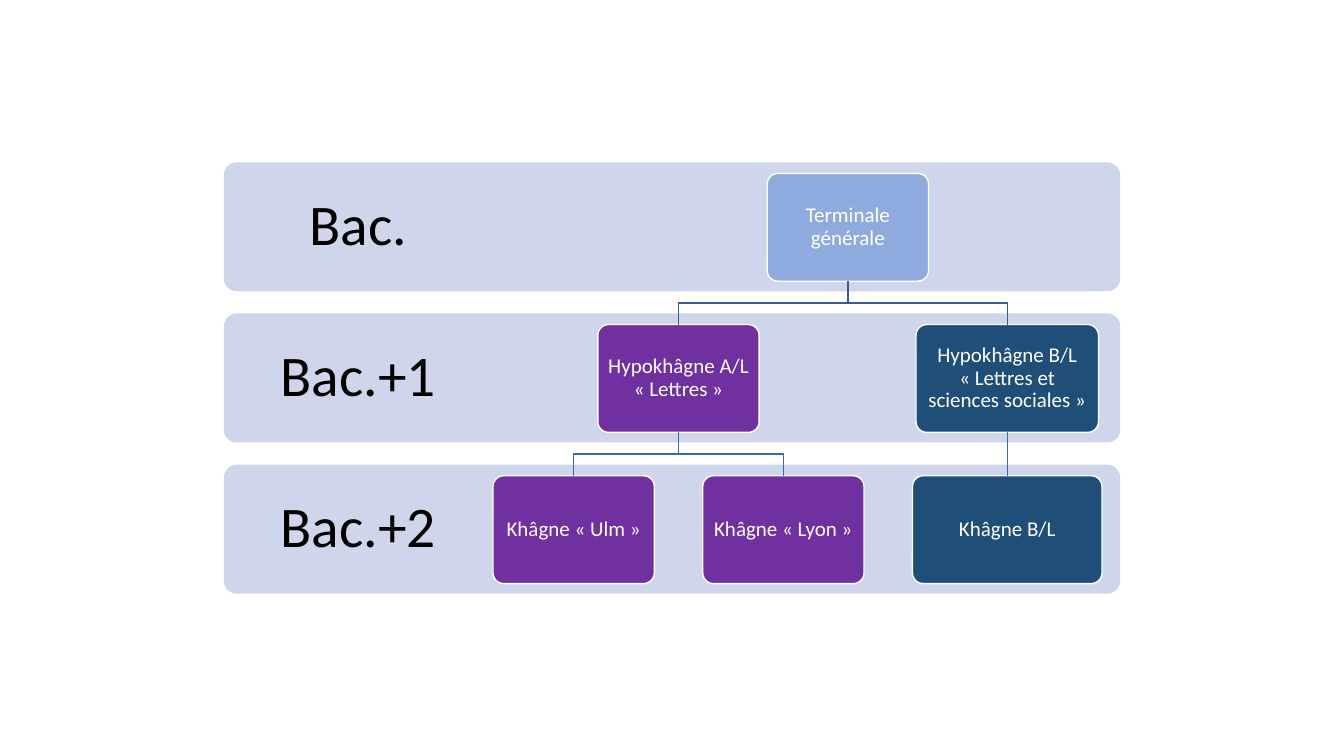
from lxml.etree import SubElement
from pptx import Presentation
from pptx.dml.color import RGBColor
from pptx.enum.shapes import MSO_CONNECTOR, MSO_SHAPE
from pptx.enum.text import MSO_ANCHOR, PP_ALIGN
from pptx.oxml.ns import qn
from pptx.util import Inches, Pt

BLACK = RGBColor(0x00, 0x00, 0x00)
WHITE = RGBColor(0xFF, 0xFF, 0xFF)
PALE = RGBColor(0xCF, 0xD5, 0xEA)
SKY = RGBColor(0x8F, 0xAA, 0xDC)
PURPLE = RGBColor(0x70, 0x30, 0xA0)
NAVY = RGBColor(0x1F, 0x4E, 0x79)
LINK_DARK = RGBColor(0x36, 0x5B, 0x9D)
LINK_LIGHT = RGBColor(0x3E, 0x67, 0xB2)

BAND_TOP, BAND_STEP = 1.61, 1.5
BAND_LEFT, BAND_WIDTH, BAND_HEIGHT = 2.22, 8.89, 1.28
LABEL_WIDTH, LABEL_INSET = 2.67, 0.32
BOX_OFFSET, BOX_HEIGHT, BOX_INSET = 0.11, 1.07, 0.06
NBSP = chr(160)

LEVELS = ["Bac.", "Bac.+1", "Bac.+2"]
BOXES = {
    "terminale": ("Terminale générale", 0, 8.41, 1.6, SKY),
    "hypo_al": ("Hypokhâgne A/L « Lettres »", 1, 6.73, 1.6, PURPLE),
    "hypo_bl": ("Hypokhâgne B/L « Lettres et sciences sociales »", 1, 9.99, 1.81, NAVY),
    "ulm": ("Khâgne « Ulm »", 2, 5.69, 1.6, PURPLE),
    "lyon": ("Khâgne « Lyon »", 2, 7.77, 1.6, PURPLE),
    "khagne_bl": ("Khâgne B/L", 2, 9.99, 1.88, NAVY),
}
ELBOWS = [
    ("terminale", "hypo_al", LINK_DARK),
    ("terminale", "hypo_bl", LINK_DARK),
    ("hypo_al", "ulm", LINK_LIGHT),
    ("hypo_al", "lyon", LINK_LIGHT),
]


def write(sp, text, size, color, inset, right=None):
    tf = sp.text_frame
    tf.word_wrap = True
    tf.vertical_anchor = MSO_ANCHOR.MIDDLE
    tf.margin_left = tf.margin_top = tf.margin_bottom = Inches(inset)
    tf.margin_right = Inches(inset if right is None else right)
    p = tf.paragraphs[0]
    p.alignment = PP_ALIGN.CENTER
    p.line_spacing = 0.9
    r = p.add_run()
    r.text = text.replace("« ", "«" + NBSP).replace(" »", NBSP + "»")
    r.font.name = "Calibri"
    r.font.size = Pt(size)
    r.font.color.rgb = color


class Diagram:
    def __init__(self, slide):
        self.shapes = slide.shapes

    def rounded(self, left, top, width, height, fill):
        sp = self.shapes.add_shape(MSO_SHAPE.ROUNDED_RECTANGLE, Inches(left),
                                   Inches(top), Inches(width), Inches(height))
        sp.adjustments[0] = 0.1
        sp.shadow.inherit = False
        sp.fill.solid()
        sp.fill.fore_color.rgb = fill
        sp.line.fill.background()
        return sp

    def band(self, level, text):
        sp = self.rounded(BAND_LEFT, BAND_TOP + level * BAND_STEP,
                          BAND_WIDTH, BAND_HEIGHT, PALE)
        write(sp, text, size=41, color=BLACK, inset=LABEL_INSET,
              right=BAND_WIDTH - LABEL_WIDTH + LABEL_INSET)

    def box(self, text, level, center, width, fill):
        top = BAND_TOP + level * BAND_STEP + BOX_OFFSET
        sp = self.rounded(center - width / 2, top, width, BOX_HEIGHT, fill)
        sp.line.color.rgb = WHITE
        sp.line.width = Pt(1)
        write(sp, text, size=15, color=WHITE, inset=BOX_INSET)
        return sp

    def elbow(self, parent, child, color):
        x1, y1 = parent.left + parent.width // 2, parent.top + parent.height
        x2, y2 = child.left + child.width // 2, child.top
        middle = (y1 + y2) // 2
        builder = self.shapes.build_freeform(x1, y1)
        builder.add_line_segments([(x1, middle), (x2, middle), (x2, y2)], close=False)
        sp = builder.convert_to_shape()
        sp.shadow.inherit = False
        sp.fill.background()
        sp.line.color.rgb = color
        sp.line.width = Pt(1)

    def straight(self, parent, child, color):
        line = self.shapes.add_connector(MSO_CONNECTOR.STRAIGHT, 0, 0, 0, 0)
        line.begin_connect(parent, 2)
        line.end_connect(child, 0)
        line.line.color.rgb = color
        line.line.width = Pt(1)
        SubElement(line._element.spPr, qn("a:effectLst"))


def main():
    prs = Presentation()
    prs.slide_width, prs.slide_height = Inches(13.33), Inches(7.5)
    diagram = Diagram(prs.slides.add_slide(prs.slide_layouts[6]))
    for level, text in enumerate(LEVELS):
        diagram.band(level, text)
    boxes = {name: diagram.box(*values) for name, values in BOXES.items()}
    for parent, child, color in ELBOWS:
        diagram.elbow(boxes[parent], boxes[child], color)
    diagram.straight(boxes["hypo_bl"], boxes["khagne_bl"], LINK_LIGHT)
    prs.save("out.pptx")


if __name__ == "__main__":
    main()
